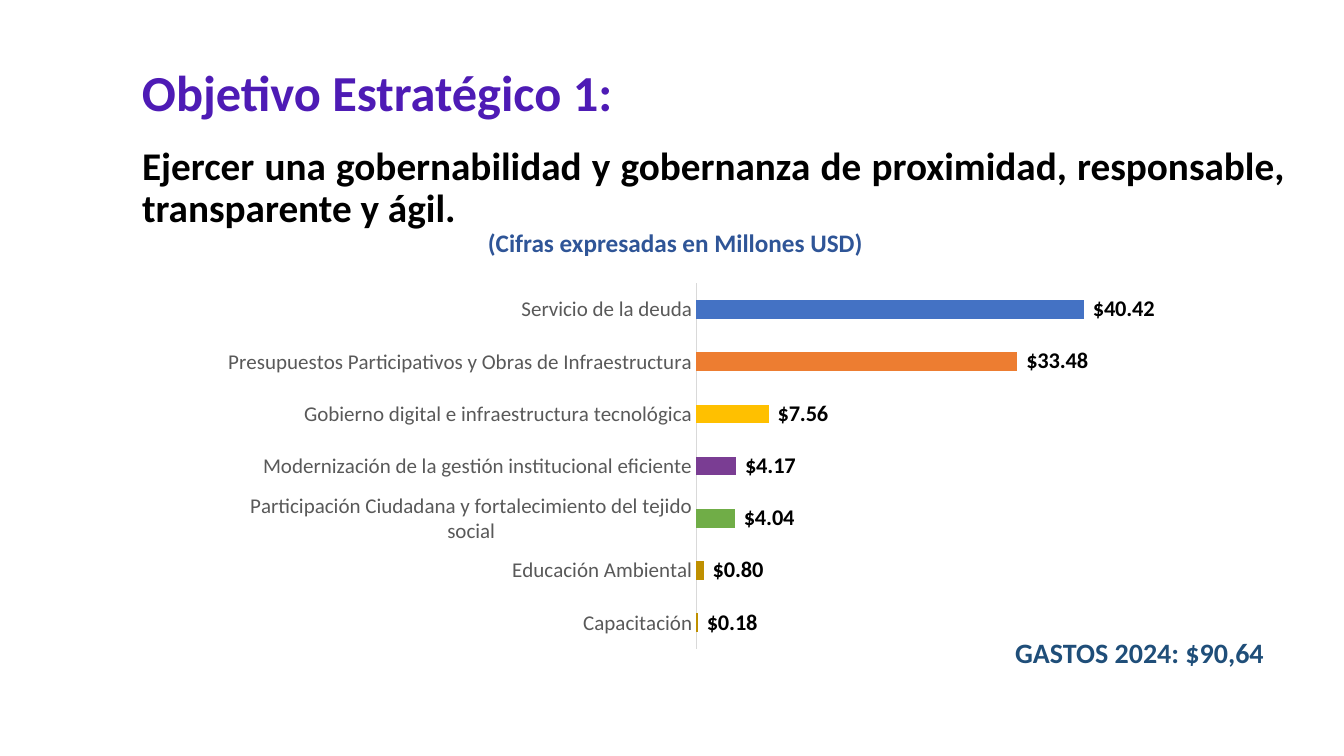
from lxml import etree
from pptx import Presentation
from pptx.chart.data import CategoryChartData
from pptx.dml.color import RGBColor
from pptx.enum.chart import XL_CHART_TYPE, XL_LABEL_POSITION, XL_TICK_LABEL_POSITION, XL_TICK_MARK
from pptx.enum.shapes import MSO_SHAPE
from pptx.enum.text import MSO_ANCHOR, MSO_AUTO_SIZE, PP_ALIGN
from pptx.oxml.ns import qn
from pptx.util import Inches, Pt

FONT = "Calibri"
MONEY = '_("$"* #,##0.00_);_("$"* \\(#,##0.00\\);_("$"* "-"??_);_(@_)'
# Expenses from the bottom bar to the top: label, millions of USD, colour
EXPENSES = [
    ("Capacitación", 0.18, "BF9000"),
    ("Educación Ambiental", 0.8, "BF9000"),
    ("Participación Ciudadana y fortalecimiento del tejido social", 4.04, "70AD47"),
    ("Modernización de la gestión institucional eficiente", 4.17, "7A3D93"),
    ("Gobierno digital e infraestructura tecnológica", 7.56, "FFC000"),
    ("Presupuestos Participativos y Obras de Infraestructura", 33.48, "ED7D31"),
    ("Servicio de la deuda", 40.42, "4472C4"),
]


def color(hex_code):
    return RGBColor.from_string(hex_code)


def style_font(font, size, hex_code, bold=False):
    font.name = FONT
    font.size = Pt(size)
    font.bold = bold
    font.color.rgb = color(hex_code)


def write_text(shape, text, size, hex_code, align=PP_ALIGN.LEFT, anchor=MSO_ANCHOR.TOP,
               spacing=None, wrap=True):
    frame = shape.text_frame
    frame.text = text
    frame.word_wrap = wrap
    frame.auto_size = MSO_AUTO_SIZE.NONE
    frame.vertical_anchor = anchor
    paragraph = frame.paragraphs[0]
    paragraph.alignment = align
    paragraph.line_spacing = spacing
    style_font(paragraph.runs[0].font, size, hex_code, bold=True)


def add_title(slide, text):
    title = slide.shapes.title
    title.left, title.top = Inches(1.31), Inches(0.62)
    title.width, title.height = Inches(11.53), Inches(1.82)
    write_text(title, text, 28, "000000", PP_ALIGN.JUSTIFY, MSO_ANCHOR.BOTTOM, 0.9)
    title.text_frame.margin_bottom = Inches(0.15)


def add_label(slide, box, text, size, hex_code, **layout):
    label = slide.shapes.add_textbox(*map(Inches, box))
    write_text(label, text, size, hex_code, **layout)


def add_total(slide, box, text):
    total = slide.shapes.add_shape(MSO_SHAPE.RECTANGLE, *map(Inches, box))
    total.shadow.inherit = False
    total.fill.solid()
    total.fill.fore_color.rgb = color("FFFFFF")
    total.line.fill.background()
    write_text(total, text, 20, "1F4E79")


def set_plot_layout(chart, **fractions):
    plot_area = chart._chartSpace.chart.plotArea
    for old_layout in plot_area.findall(qn("c:layout")):
        plot_area.remove(old_layout)
    layout = etree.Element(qn("c:layout"))
    manual = etree.SubElement(layout, qn("c:manualLayout"))
    settings = {"layoutTarget": "inner", "xMode": "edge", "yMode": "edge", **fractions}
    for name, value in settings.items():
        etree.SubElement(manual, qn(f"c:{name}")).set("val", str(value))
    plot_area.insert(0, layout)


def add_expense_chart(slide, box):
    labels, values, colors = zip(*EXPENSES)
    data = CategoryChartData(number_format=MONEY)
    data.categories = labels
    data.add_series("Series 1", values)
    chart = slide.shapes.add_chart(XL_CHART_TYPE.BAR_CLUSTERED, *map(Inches, box), data).chart
    chart.has_legend = False
    chart.has_title = False
    style_font(chart.font, 10, "000000")
    set_plot_layout(chart, x=0.5, y=0.05, w=0.46, h=0.9)

    # Axes
    category_axis = chart.category_axis
    category_axis.major_tick_mark = XL_TICK_MARK.NONE
    category_axis.tick_label_position = XL_TICK_LABEL_POSITION.NEXT_TO_AXIS
    style_font(category_axis.tick_labels.font, 15, "595959")
    category_axis.format.line.color.rgb = color("D9D9D9")
    category_axis.format.line.width = Pt(0.75)
    value_axis = chart.value_axis
    value_axis.minimum_scale, value_axis.maximum_scale = 0, 45
    value_axis.has_major_gridlines = False
    value_axis.visible = False

    # Bars
    plot = chart.plots[0]
    plot.gap_width = 182
    plot.vary_by_categories = False
    series = plot.series[0]
    series.format.fill.solid()
    series.format.fill.fore_color.rgb = color("4472C4")
    for index, hex_code in enumerate(colors):
        fill = series.points[index].format.fill
        fill.solid()
        fill.fore_color.rgb = color(hex_code)

    # Value labels
    data_labels = series.data_labels
    data_labels.show_value = True
    data_labels.position = XL_LABEL_POSITION.OUTSIDE_END
    data_labels.number_format = MONEY
    data_labels.number_format_is_linked = False
    style_font(data_labels.font, 16, "000000", bold=True)


def main():
    presentation = Presentation()
    presentation.slide_width, presentation.slide_height = Inches(13.33), Inches(7.5)
    slide = presentation.slides.add_slide(presentation.slide_layouts[5])

    add_label(slide, (4.74, 2.21, 3.95, 0.4), "(Cifras expresadas en Millones USD)",
              18, "2F5597", wrap=False)
    add_total(slide, (9.97, 6.26, 2.87, 0.44), "GASTOS 2024: $90,64")
    add_title(slide, "Ejercer una gobernabilidad y gobernanza de proximidad, "
                     "responsable, transparente y ágil.")
    add_label(slide, (1.31, 0.52, 11.53, 0.85), "Objetivo Estratégico 1:", 36, "4E1BB5",
              align=PP_ALIGN.JUSTIFY, anchor=MSO_ANCHOR.MIDDLE, spacing=0.9)
    add_expense_chart(slide, (2.25, 2.61, 9.31, 4.03))
    presentation.save("out.pptx")


if __name__ == "__main__":
    main()
